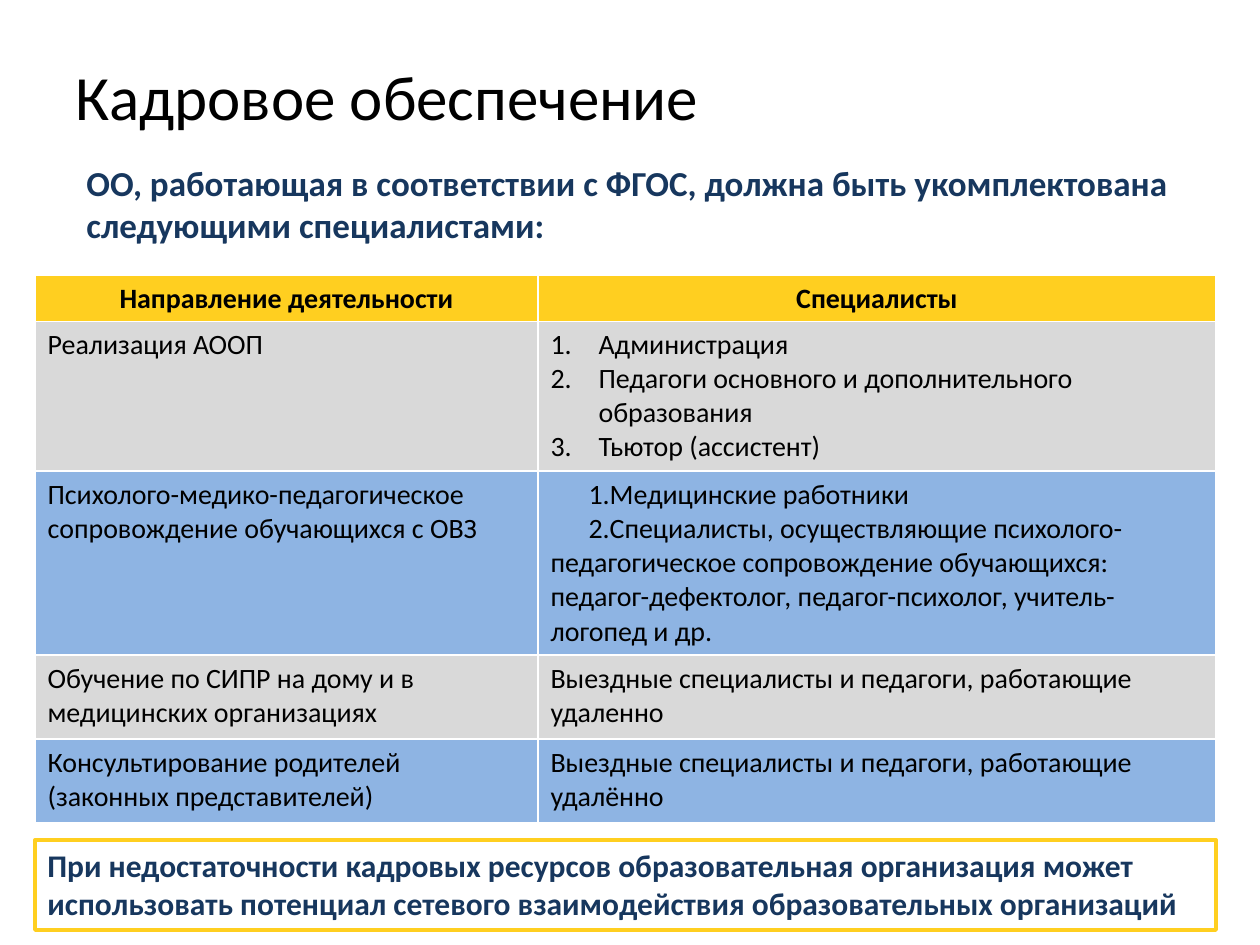
from lxml import etree
from pptx import Presentation
from pptx import util as u
from pptx.dml.color import RGBColor
from pptx.enum import shapes, text
from pptx.oxml import ns

# Content
TITLE = "Кадровое обеспечение"
LEAD = "ОО, работающая в соответствии с ФГОС, должна быть укомплектована следующими специалистами:"
NOTE = ("При недостаточности кадровых ресурсов образовательная организация может "
        "использовать потенциал сетевого взаимодействия образовательных организаций")
# Each row: left paragraphs, right paragraphs, list style of the right cell
ROWS = [
    (["Направление деятельности"], ["Специалисты"], None),
    (["Реализация АООП"],
     ["Администрация", "Педагоги основного и дополнительного образования",
      "Тьютор (ассистент)"], "hanging"),
    (["Психолого-медико-педагогическое сопровождение обучающихся с ОВЗ"],
     ["Медицинские работники",
      "Специалисты, осуществляющие психолого-педагогическое сопровождение обучающихся: "
      "педагог-дефектолог, педагог-психолог, учитель-логопед и др."], "first_line"),
    (["Обучение по СИПР на дому и в медицинских организациях"],
     ["Выездные специалисты и педагоги, работающие удаленно"], None),
    (["Консультирование родителей (законных представителей)"],
     ["Выездные специалисты и педагоги, работающие удалённо"], None),
]

# Theme and geometry (px)
THEME = {
    "font": "Calibri",
    "black": "000000", "navy": "17375E", "white": "FFFFFF",
    "header": "FFCF20", "bands": ("D9D9D9", "8EB4E3"),
    "title": 36, "lead": 20, "note": 18, "table": 16,
}
PX = 914400 / 126
TITLE_BOX = (63, 16, 1134, 158)
LEAD_BOX = (74, 155, 1142, 97)
NOTE_BOX = (35, 840, 1181, 90)
TABLE_AT = (35, 275)
COLUMNS = (503, 678)
HEIGHTS = (46, 150, 184, 84, 84)
INDENTS = {"hanging": (48, -48), "first_line": (0, 38)}


def px(length):
    return u.Emu(round(length * PX))


def colour(name):
    return RGBColor.from_string(THEME.get(name, name))


def number(para, style):
    """Give a paragraph automatic numbers and its indent."""
    props = para._p.get_or_add_pPr()
    for key, length in zip(("marL", "indent"), INDENTS[style]):
        props.set(key, str(px(length)))
    etree.SubElement(props, ns.qn("a:buFont"), typeface="+mj-lt")
    etree.SubElement(props, ns.qn("a:buAutoNum"), type="arabicPeriod")


def write(frame, lines, size, ink="black", bold=False, align=text.PP_ALIGN.LEFT, style=None):
    frame.word_wrap = True
    for index, line in enumerate(lines):
        para = frame.add_paragraph() if index else frame.paragraphs[0]
        para.alignment = align
        span = para.add_run()
        span.text = line
        formats = {"name": THEME["font"], "size": u.Pt(THEME[size]), "bold": bold}
        for key, value in formats.items():
            setattr(span.font, key, value)
        span.font.color.rgb = colour(ink)
        if style:
            number(para, style)


def outline(cell):
    """Draw thin white borders on all four sides of a cell."""
    props = cell._tc.get_or_add_tcPr()
    for index, side in enumerate(("lnL", "lnR", "lnT", "lnB")):
        line = etree.Element(ns.qn(f"a:{side}"), w=str(u.Pt(1)))
        fill = etree.SubElement(line, ns.qn("a:solidFill"))
        etree.SubElement(fill, ns.qn("a:srgbClr"), val=THEME["white"])
        props.insert(index, line)


def add_text(page, area, line, size, ink, bold, anchor):
    box = page.shapes.add_textbox(*map(px, area))
    box.text_frame.vertical_anchor = anchor
    write(box.text_frame, [line], size, ink, bold)


def add_staff_table(page):
    frame = page.shapes.add_table(len(ROWS), len(COLUMNS), *map(px, TABLE_AT),
                                  px(sum(COLUMNS)), px(sum(HEIGHTS)))
    table = frame.table
    for column, width in zip(table.columns, COLUMNS):
        column.width = px(width)
    for r, (left, right, style) in enumerate(ROWS):
        table.rows[r].height = px(HEIGHTS[r])
        header = r == 0
        align = text.PP_ALIGN.CENTER if header else text.PP_ALIGN.LEFT
        for c, (lines, numbering) in enumerate(((left, None), (right, style))):
            cell = table.cell(r, c)
            cell.fill.solid()
            cell.fill.fore_color.rgb = colour("header" if header else THEME["bands"][(r - 1) % 2])
            outline(cell)
            write(cell.text_frame, lines, "table", bold=header, align=align, style=numbering)


def add_note(page):
    box = page.shapes.add_shape(shapes.MSO_SHAPE.RECTANGLE, *map(px, NOTE_BOX))
    box.shadow.inherit = False
    box.fill.background()
    box.line.color.rgb = colour("header")
    box.line.width = u.Pt(2.25)
    box.text_frame.vertical_anchor = text.MSO_ANCHOR.TOP
    write(box.text_frame, [NOTE], "note", "navy", True)


def main():
    deck = Presentation()
    deck.slide_width, deck.slide_height = px(1260), px(945)
    page = deck.slides.add_slide(deck.slide_layouts[6])
    add_text(page, TITLE_BOX, TITLE, "title", "black", False, text.MSO_ANCHOR.MIDDLE)
    add_staff_table(page)
    add_note(page)
    add_text(page, LEAD_BOX, LEAD, "lead", "navy", True, text.MSO_ANCHOR.TOP)
    deck.save("out.pptx")


if __name__ == "__main__":
    main()
